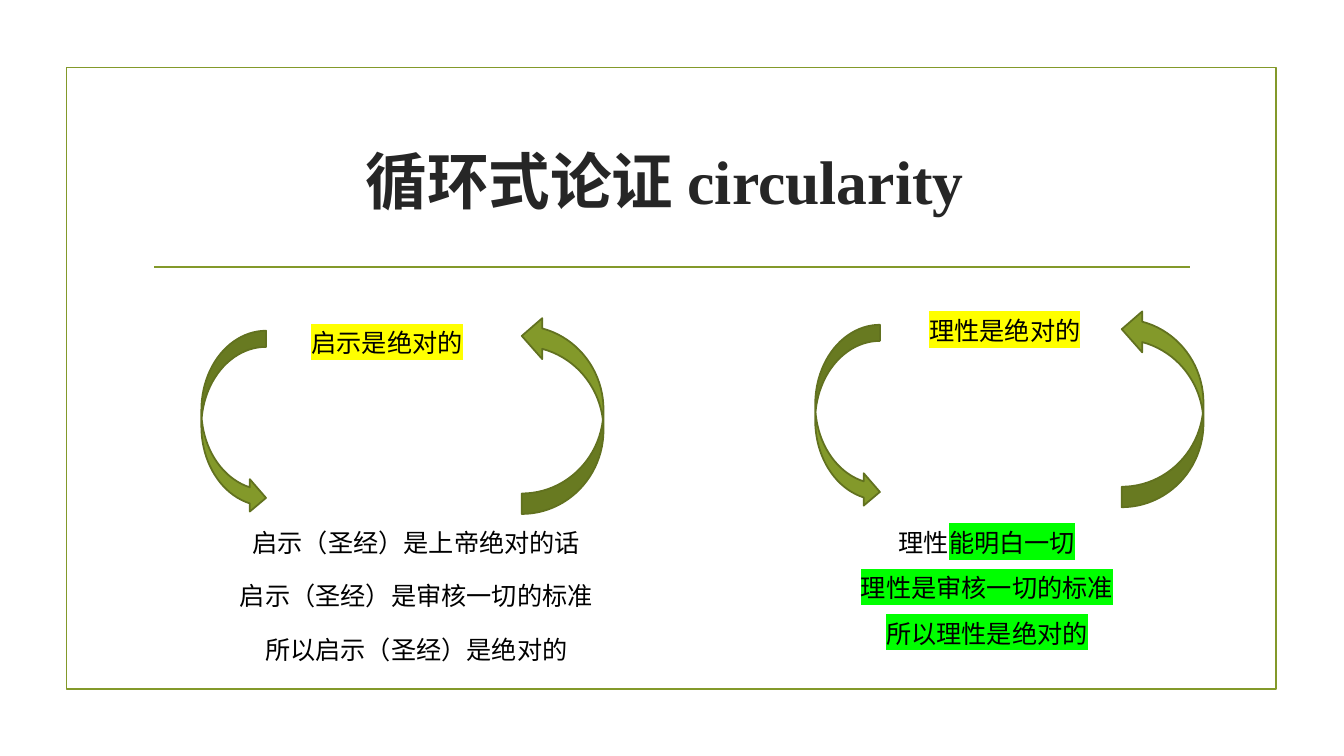
from dataclasses import dataclass

from lxml.etree import SubElement
from pptx import Presentation
from pptx.dml.color import RGBColor
from pptx.enum.shapes import MSO_CONNECTOR as Connector, MSO_SHAPE as Preset
from pptx.enum.text import MSO_ANCHOR as Anchor, MSO_AUTO_SIZE as AutoSize, PP_ALIGN as Align
from pptx.oxml.ns import qn
from pptx.util import Cm, Pt


@dataclass(frozen=True)
class Theme:
    olive: RGBColor = RGBColor.from_string("83992A")
    dark_olive: RGBColor = RGBColor.from_string("61711F")
    heading: RGBColor = RGBColor.from_string("262626")
    ink: RGBColor = RGBColor.from_string("000000")
    yellow: str = "FFFF00"
    green: str = "00FF00"
    latin: str = "Times New Roman"
    chinese: str = "Noto Sans CJK SC"
    title_size: Pt = Pt(44)
    text_size: Pt = Pt(18)
    line_width: Pt = Pt(1.25)


theme = Theme()


def add_span(para, text, size, color, latin, highlight=None):
    span = para.add_run()
    span.text = text
    span.font.size = size
    span.font.color.rgb = color
    properties = span.font._element
    if highlight:
        marker = SubElement(properties, qn("a:highlight"))
        SubElement(marker, qn("a:srgbClr"), val=highlight)
    span.font.name = latin
    SubElement(properties, qn("a:ea"), typeface=theme.chinese)
    return span


def add_text(page, place, lines, wrap=False, line_spacing=None, gap=None):
    """Add a centred box; each line is a list of (text, highlight) pairs."""
    box = page.shapes.add_textbox(*map(Cm, place))
    frame = box.text_frame
    frame.word_wrap = wrap
    frame.auto_size = AutoSize.SHAPE_TO_FIT_TEXT
    for index, line in enumerate(lines):
        para = frame.add_paragraph() if index else frame.paragraphs[0]
        para.alignment = Align.CENTER
        if line_spacing:
            para.line_spacing = line_spacing
        if index and gap:
            para.space_before = gap
        for text, highlight in line:
            add_span(para, text, theme.text_size, theme.ink, theme.chinese, highlight)


deck = Presentation()
deck.slide_width, deck.slide_height = Cm(33.87), Cm(19.05)
page = deck.slides.add_slide(deck.slide_layouts[5])

# Border and rule
border = page.shapes.add_shape(Preset.RECTANGLE, Cm(1.68), Cm(1.7), Cm(30.48), Cm(15.67))
border.shadow.inherit = False
border.fill.background()
border.line.color.rgb = theme.olive
border.line.width = theme.line_width

rule = page.shapes.add_connector(Connector.STRAIGHT, Cm(3.89), Cm(6.73), Cm(30), Cm(6.73))
rule.line.color.rgb = theme.olive
rule.line.width = theme.line_width
SubElement(rule._element.spPr, qn("a:effectLst"))

# Title
title = page.shapes.title
title.left, title.top, title.width, title.height = map(Cm, (3.61, 2.72, 26.67, 3.63))
title.text_frame.vertical_anchor = Anchor.MIDDLE
heading = title.text_frame.paragraphs[0]
heading.alignment = Align.CENTER
add_span(heading, "循环式论证 circularity ", theme.title_size, theme.heading,
         theme.latin).font.bold = True

# Two loops: a claim between a descending and a returning arrow
loops = [
    ("启示是绝对的", (7.57, 8.13), (3.58, 9.83), (11.68, 9.42)),
    ("理性是绝对的", (23.14, 7.82), (19.05, 9.68), (26.8, 9.25)),
]
for claim, claim_at, descent_at, return_at in loops:
    add_text(page, (*claim_at, 4.37, 1.02), [[(claim, theme.yellow)]])
    for preset, place, size, turn in (
        (Preset.CURVED_DOWN_ARROW, descent_at, (4.62, 1.63), 90),
        (Preset.CURVED_UP_ARROW, return_at, (5, 2.06), 270),
    ):
        arrow = page.shapes.add_shape(preset, *map(Cm, place + size))
        arrow.rotation = turn
        arrow.shadow.inherit = False
        arrow.fill.solid()
        arrow.fill.fore_color.rgb = theme.olive
        arrow.line.color.rgb = theme.dark_olive
        arrow.line.width = theme.line_width
        if preset == Preset.CURVED_DOWN_ARROW:
            arrow._element.spPr.xfrm.set("flipV", "1")

# Arguments under the loops
add_text(page, (20.02, 12.78, 9.7, 3.53), [
    [("理性", None), ("能明白一切", theme.green)],
    [("理性是审核一切的标准", theme.green)],
    [("所以理性是绝对的", theme.green)],
], wrap=True, line_spacing=1.5)
add_text(page, (5.74, 13.16, 9.5, 4.88), [
    [("启示（圣经）是上帝绝对的话", None)],
    [("启示（圣经）是审核一切的标准", None)],
    [("所以启示（圣经）是绝对的", None)],
], gap=Pt(16.7))

deck.save("out.pptx")
